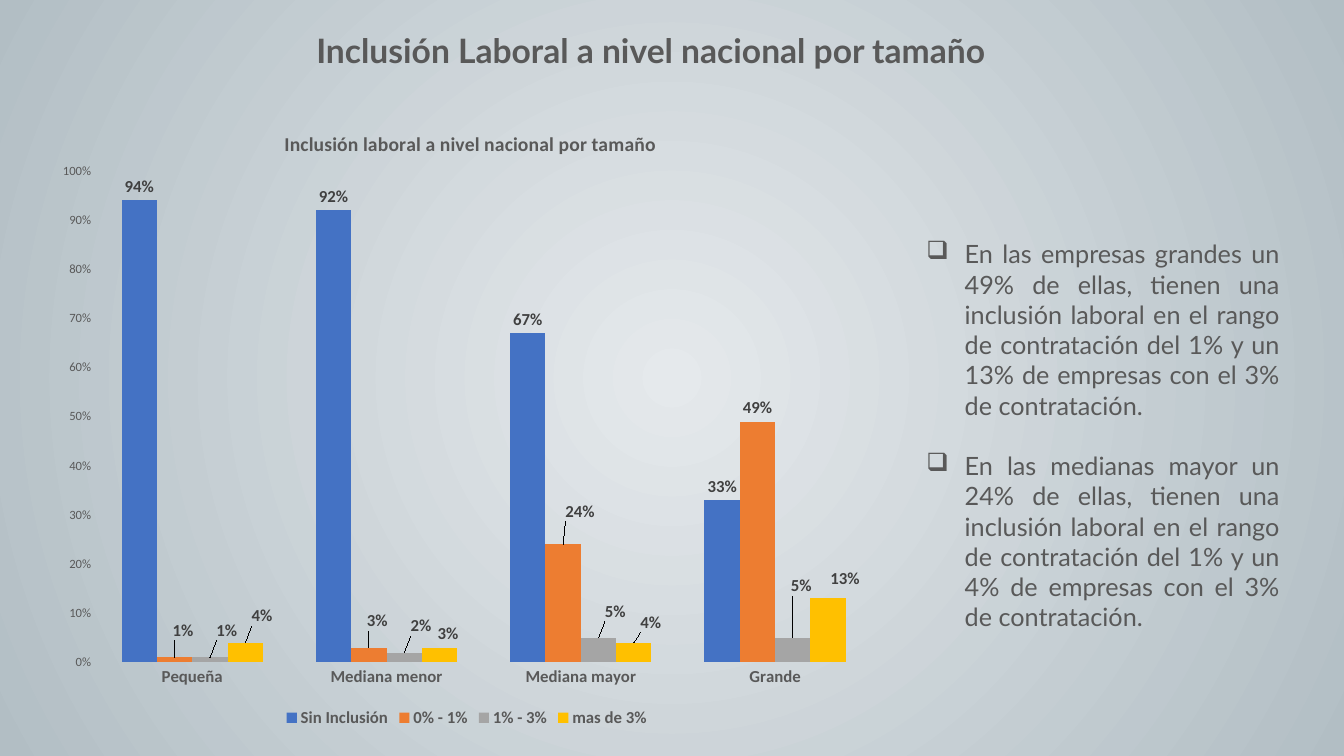
from lxml import etree
from pptx import Presentation
from pptx.chart.data import CategoryChartData
from pptx.dml.color import RGBColor
from pptx.enum.chart import (XL_CHART_TYPE, XL_LABEL_POSITION,
                             XL_LEGEND_POSITION, XL_TICK_MARK)
from pptx.enum.text import MSO_ANCHOR, PP_ALIGN
from pptx.oxml.ns import qn
from pptx.util import Inches, Pt

COLUMNS = XL_CHART_TYPE.COLUMN_CLUSTERED
ABOVE_BAR = XL_LABEL_POSITION.OUTSIDE_END
BOTTOM = XL_LEGEND_POSITION.BOTTOM
NO_TICK = XL_TICK_MARK.NONE
CENTER, JUSTIFY = PP_ALIGN.CENTER, PP_ALIGN.JUSTIFY
MIDDLE = MSO_ANCHOR.MIDDLE

CELL = Inches(0.1)  # side of one grid cell
GREY, LABEL_GREY = "595959", "404040"
PERCENT = "0%"

HEADING = "Inclusión Laboral a nivel nacional por tamaño"
CHART_HEADING = "Inclusión laboral a nivel nacional por tamaño"
FINDINGS = [
    "En las empresas grandes un 49% de ellas, tienen una inclusión laboral en el "
    "rango de contratación del 1% y un 13% de empresas con el 3% de contratación.",
    "En las medianas mayor un 24% de ellas, tienen una inclusión laboral en el "
    "rango de contratación del 1% y un 4% de empresas con el 3% de contratación.",
]
COMPANY_SIZES = ["Pequeña", "Mediana menor", "Mediana mayor", "Grande"]
# name, colour, values, label shifts by category (shares of the chart's size)
INCLUSION_RANGES = [
    ("Sin Inclusión", "4472C4", (0.94, 0.92, 0.67, 0.33), {}),
    ("0% - 1%", "ED7D31", (0.01, 0.03, 0.24, 0.49),
     {0: (0.01, -0.02), 1: (0.01, -0.02), 2: (0.02, -0.03)}),
    ("1% - 3%", "A5A5A5", (0.01, 0.02, 0.05, 0.05),
     {0: (0.02, -0.02), 1: (0.02, -0.02), 2: (0.02, -0.02), 3: (0.01, -0.06)}),
    ("mas de 3%", "FFC000", (0.04, 0.03, 0.04, 0.13),
     {0: (0.02, -0.02), 1: (0.01, 0), 2: (0.02, -0.01), 3: (0.02, -0.01)}),
]


def rgb(color):
    return RGBColor.from_string(color)


def grid(*cells):
    return [round(cell * CELL) for cell in cells]


def style(font, size, color=GREY, bold=False, name="Calibri"):
    font.size, font.bold, font.name = Pt(size), bold, name
    font.color.rgb = rgb(color)


def manual_layout(**settings):
    layout = etree.Element(qn("c:layout"))
    manual = etree.SubElement(layout, qn("c:manualLayout"))
    for tag, value in settings.items():
        etree.SubElement(manual, qn("c:" + tag)).set("val", str(value))
    return layout


def replace_layout(parent, previous, layout):
    """Put a layout at its place in the parent, after the named child."""
    for old in parent.findall(qn("c:layout")):
        parent.remove(old)
    before = parent.find(qn(previous)) if previous else None
    if before is None:
        parent.insert(0, layout)
    else:
        before.addnext(layout)


def paint_background(slide, inner, outer):
    fill = slide.background.fill
    fill.gradient()
    for stop, color, position in zip(fill.gradient_stops, (inner, outer), (0, 1)):
        stop.color.rgb = rgb(color)
        stop.position = position
    gradient = slide.element.find(".//" + qn("a:gradFill"))
    linear = gradient.find(qn("a:lin"))
    circle = etree.Element(qn("a:path"), path="circle")
    etree.SubElement(circle, qn("a:fillToRect"),
                     {side: "50000" for side in "ltrb"})
    gradient.replace(linear, circle)


def place_heading(slide, text, cells):
    heading = slide.shapes.title
    heading.left, heading.top, heading.width, heading.height = grid(*cells)
    frame = heading.text_frame
    frame.text = text
    frame.vertical_anchor = MIDDLE
    frame.paragraphs[0].alignment = CENTER
    style(frame.paragraphs[0].font, 24, bold=True, name="Lato")


def add_findings(slide, findings, cells):
    frame = slide.shapes.add_textbox(*grid(*cells)).text_frame
    frame.word_wrap = True
    for number, finding in enumerate(findings):
        paragraph = frame.add_paragraph() if number else frame.paragraphs[0]
        paragraph.text = finding
        paragraph.alignment = JUSTIFY
        if number:
            paragraph.space_before = Pt(21.6)
        properties = paragraph._p.get_or_add_pPr()
        properties.set("marL", str(Inches(0.38)))
        properties.set("indent", str(-Inches(0.38)))
        etree.SubElement(properties, qn("a:buChar"), char="❑")
        style(paragraph.font, 18, name="Lato")


def format_axis(axis, size, bold=False):
    axis.major_tick_mark = axis.minor_tick_mark = NO_TICK
    axis.has_major_gridlines = False
    axis.format.line.fill.background()
    style(axis.tick_labels.font, size, bold=bold)


def format_series(series, color, shifts):
    series.format.fill.solid()
    series.format.fill.fore_color.rgb = rgb(color)
    series.invert_if_negative = False
    labels = series.data_labels
    labels.show_value = True
    labels.position = ABOVE_BAR
    labels.number_format, labels.number_format_is_linked = PERCENT, False
    style(labels.font, 12, LABEL_GREY, bold=True)
    # Labels moved away from their bars
    for category, (x, y) in shifts.items():
        label = series.points[category].data_label
        label.position = ABOVE_BAR
        style(label.font, 12, LABEL_GREY, bold=True)
        moved = series._element.xpath(f'c:dLbls/c:dLbl[c:idx/@val="{category}"]')[0]
        replace_layout(moved, "c:idx", manual_layout(x=x, y=y))


def add_inclusion_chart(slide, cells):
    data = CategoryChartData(number_format=PERCENT)
    data.categories = COMPANY_SIZES
    for name, _, values, _ in INCLUSION_RANGES:
        data.add_series(name, values)
    chart = slide.shapes.add_chart(COLUMNS, *grid(*cells), data).chart
    style(chart.font, 10, "000000")

    # Chart title
    chart.has_title = True
    title_frame = chart.chart_title.text_frame
    title_frame.text = CHART_HEADING
    style(title_frame.paragraphs[0].font, 14, bold=True)
    replace_layout(chart.chart_title._element, "c:tx",
                   manual_layout(xMode="edge", yMode="edge", x=0.28, y=0.04))

    # Axes and legend
    format_axis(chart.category_axis, 12, bold=True)
    share_axis = chart.value_axis
    format_axis(share_axis, 9)
    share_axis.minimum_scale, share_axis.maximum_scale = 0, 1
    share_axis.major_unit = 0.1
    share_axis.tick_labels.number_format = PERCENT
    share_axis.tick_labels.number_format_is_linked = False
    chart.has_legend = True
    chart.legend.position = BOTTOM
    chart.legend.include_in_layout = False
    style(chart.legend.font, 12, bold=True)

    # Columns
    plot = chart.plots[0]
    plot.gap_width, plot.overlap = 150, 0
    plot.vary_by_categories = False
    for series, (_, color, _, shifts) in zip(plot.series, INCLUSION_RANGES):
        format_series(series, color, shifts)
    replace_layout(chart._chartSpace.chart.plotArea, None,
                   manual_layout(layoutTarget="inner", xMode="edge", yMode="edge",
                                 x=0.06, y=0.11, w=0.92, h=0.78))


def main():
    presentation = Presentation()
    presentation.slide_width = Inches(13.33)
    presentation.slide_height = Inches(7.5)
    slide = presentation.slides.add_slide(presentation.slide_layouts[5])
    paint_background(slide, "E5E9EC", "B2BEC4")
    place_heading(slide, HEADING, (6.5, 2.5, 116.1, 5))
    add_findings(slide, FINDINGS, (90.9, 23.2, 37, 43.4))
    add_inclusion_chart(slide, (4.4, 10.1, 83.8, 62.5))
    presentation.save("out.pptx")


if __name__ == "__main__":
    main()
